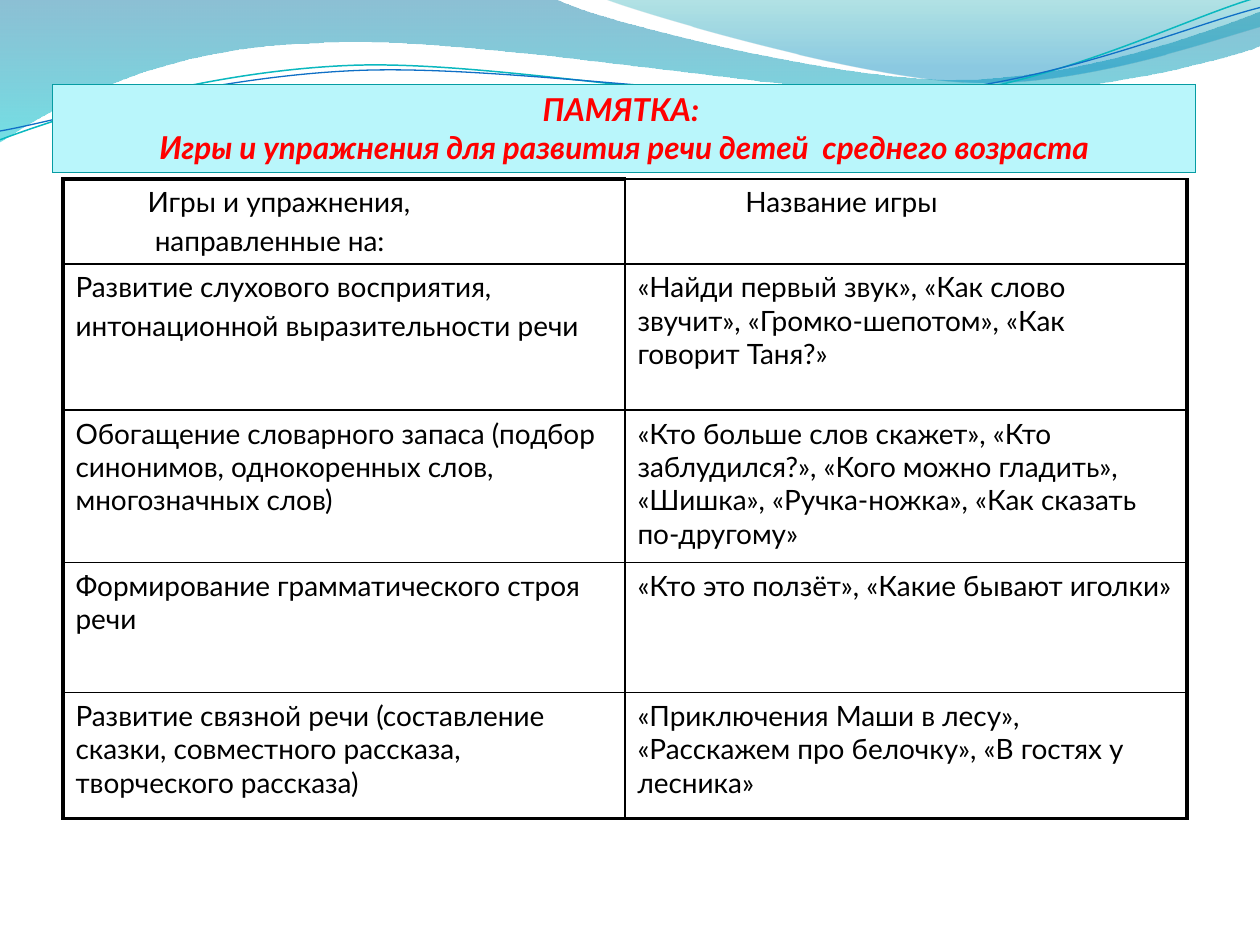
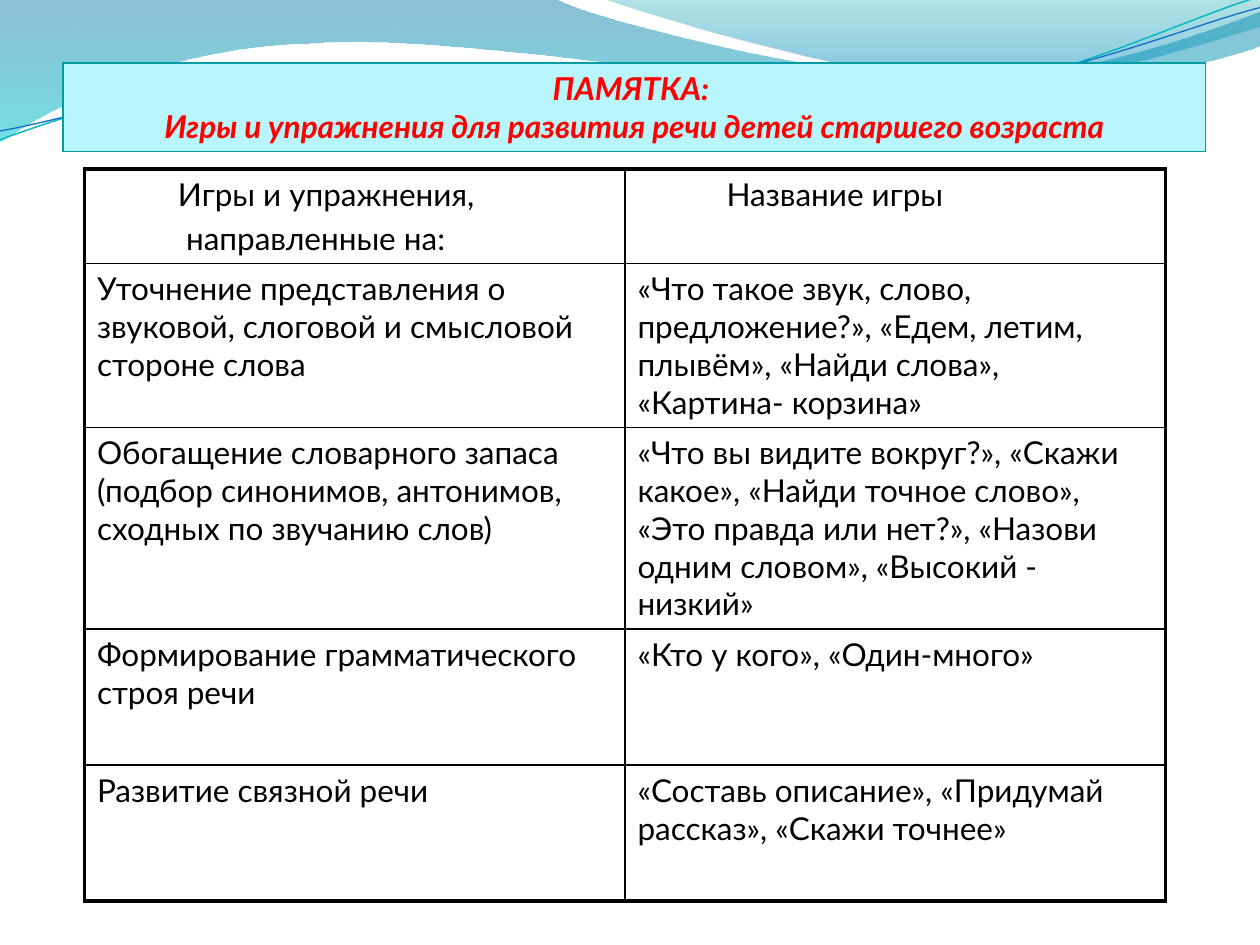
"""Builds two memo slides listing speech games for middle and senior preschool groups."""
from lxml.etree import SubElement
from pptx import Presentation
from pptx.dml.color import RGBColor as RGB
from pptx.enum.text import PP_ALIGN
from pptx.oxml.ns import qn
from pptx.util import Inches, Pt

FONT = "Lato"
BLACK = RGB(0x00, 0x00, 0x00)
RED = RGB(0xFF, 0x00, 0x00)
PALE_CYAN = RGB(0xB9, 0xF6, 0xFB)
TEAL_EDGE = RGB(0x06, 0x9C, 0xA3)
DEEP_BLUE = RGB(0x00, 0x74, 0xA1)
CYAN = RGB(0x00, 0xC6, 0xCF)
SEA = RGB(0x00, 0xA1, 0xA9)
SKY = RGB(0x00, 0x8B, 0xBF)
TURQUOISE = RGB(0x0A, 0xB8, 0xBF)
BLUE = RGB(0x0F, 0x6F, 0xC6)

THIN, THICK = 1, 2.25
SPACE_EM = 0.257
HEADER = (["Игры и упражнения,", "направленные на:"], ["Название игры"])

MEMOS = [
    {
        "title": ["ПАМЯТКА: ",
                  "Игры и упражнения для развития речи детей  среднего возраста"],
        "title_at": (0.42, 0.67),
        "table_at": (0.5, 1.42),
        "width": 8.92,
        "heights": [0.67, 1.16, 1.21, 1.03, 1.0],
        "size": 16,
        "header_indents": [(10, 11), (15,)],
        "top_edges": (THICK, THIN),
        "rows": [
            HEADER,
            (["Развитие слухового восприятия,", "интонационной выразительности речи"],
             ["«Найди первый звук», «Как слово звучит», «Громко-шепотом», "
              "«Как говорит Таня?»"]),
            (["Обогащение словарного запаса (подбор синонимов, однокоренных слов, "
              "многозначных слов)"],
             ["«Кто больше слов скажет», «Кто заблудился?», «Кого можно гладить», "
              "«Шишка», «Ручка-ножка», «Как сказать по-другому»"]),
            (["Формирование грамматического строя речи"],
             ["«Кто это ползёт», «Какие бывают иголки»"]),
            (["Развитие связной речи (составление сказки, совместного рассказа, "
              "творческого рассказа)"],
             ["«Приключения Маши в лесу», «Расскажем про белочку», "
              "«В гостях у лесника»"]),
        ],
    },
    {
        "title": ["ПАМЯТКА: ",
                  "Игры и упражнения для развития речи детей старшего возраста"],
        "title_at": (0.5, 0.5),
        "table_at": (0.67, 1.34),
        "width": 8.58,
        "heights": [0.75, 1.3, 1.6, 1.08, 1.08],
        "size": 18,
        "header_indents": [(10, 11), (11,)],
        "top_edges": (THICK, THICK),
        "rows": [
            HEADER,
            (["Уточнение представления о звуковой, слоговой и смысловой стороне слова"],
             ["«Что такое звук, слово, предложение?», «Едем, летим, плывём», "
              "«Найди слова», «Картина- корзина»"]),
            (["Обогащение словарного запаса (подбор синонимов, антонимов, "
              "сходных по звучанию слов)"],
             ["«Что вы видите вокруг?», «Скажи какое», «Найди точное слово», "
              "«Это правда или нет?», «Назови одним словом», «Высокий - низкий»"]),
            (["Формирование грамматического строя речи"],
             ["«Кто у кого», «Один-много»"]),
            (["Развитие связной речи"],
             ["«Составь описание», «Придумай рассказ», «Скажи точнее»"]),
        ],
    },
]

WAVES = [
    ([(0, 0), (4.4, -0.01), (4.76, 0.17, 6.64, 0.63, 7.58, 0.63),
      (8.53, 0.63, 9.58, 0.26, 10, 0.09), (10.01, 0.36),
      (9.83, 0.44, 8.7, 0.76, 7.46, 0.75), (6.22, 0.75, 3.82, 0.28, 2.57, 0.34),
      (1.29, 0.36, 0.46, 0.83, -0.01, 1.13), (0, 0)],
     [(0, DEEP_BLUE, 45), (1, CYAN, 55)]),
    ([(4.79, -0.01), (5.09, 0.11, 6.82, 0.62, 7.69, 0.65),
      (8.56, 0.69, 9.61, 0.32, 10, 0.21), (10, 0), (4.79, -0.01)],
     [(0, SEA, 30), (0.8, SKY, 45)]),
]

WAVE_LINES = [
    ([(0, 1.11), (0.48, 0.93, 1.58, 0.57, 2.77, 0.52),
      (3.95, 0.47, 5.93, 0.89, 7.13, 0.8), (8.33, 0.71, 9.38, 0.15, 9.98, -0.02)],
     TURQUOISE, 0.85),
    ([(0, 1.04), (0.47, 0.96, 1.64, 0.61, 2.83, 0.56),
      (4.03, 0.51, 5.97, 0.84, 7.17, 0.75), (8.36, 0.67, 9.41, 0.21, 10, 0.06)],
     BLUE, 0.75),
]


def add_outline(slide, outline, close):
    ends = [(Inches(part[-2]), Inches(part[-1])) for part in outline]
    builder = slide.shapes.build_freeform(*ends[0])
    builder.add_line_segments(ends[1:], close=close)
    sp = builder.convert_to_shape()
    sp.shadow.inherit = False
    segments = list(sp.element.iter(qn("a:lnTo")))
    for segment, part in zip(segments, outline[1:]):
        if len(part) == 6:
            segment.tag = qn("a:cubicBezTo")
            for i in (0, 2):
                pt = segment.makeelement(qn("a:pt"), {
                    "x": str(Inches(part[i]) - sp.left),
                    "y": str(Inches(part[i + 1]) - sp.top)})
                segment.insert(i // 2, pt)
    return sp


def add_waves(slide):
    for outline, stops in WAVES:
        sp = add_outline(slide, outline, True)
        sp.line.fill.background()
        sp.fill.gradient()
        sp.fill.gradient_angle = 270
        for stop, (position, color, _) in zip(sp.fill.gradient_stops, stops):
            stop.position = position
            stop.color.rgb = color
        for clr, (_, _, opacity) in zip(sp.element.iter(qn("a:srgbClr")), stops):
            SubElement(clr, qn("a:alpha")).set("val", str(opacity * 1000))
    for outline, color, width in WAVE_LINES:
        sp = add_outline(slide, outline, False)
        sp.fill.background()
        sp.line.color.rgb = color
        sp.line.width = Pt(width)


def set_borders(cell, color, widths):
    tcPr = cell._tc.get_or_add_tcPr()
    for side, width in zip("LRTB", widths):
        ln = SubElement(tcPr, qn(f"a:ln{side}"), w=str(Pt(width)))
        SubElement(SubElement(ln, qn("a:solidFill")), qn("a:srgbClr"), val=str(color))


def write(cell, lines, size, color):
    tf = cell.text_frame
    tf.text = "\n".join(lines)
    for p in tf.paragraphs:
        font = p.runs[0].font
        font.name, font.size, font.color.rgb = FONT, Pt(size), color
    return tf.paragraphs


def add_plain_table(slide, at, width, heights, columns):
    x, y = at
    table = slide.shapes.add_table(len(heights), columns, Inches(x), Inches(y),
                                   Inches(width), Inches(sum(heights))).table
    table.first_row = table.horz_banding = False
    for row, height in zip(table.rows, heights):
        row.height = Inches(height)
    return table


def add_games(slide, memo):
    size, last = memo["size"], len(memo["rows"]) - 1
    table = add_plain_table(slide, memo["table_at"], memo["width"], memo["heights"], 2)
    for i, row in enumerate(memo["rows"]):
        for j, lines in enumerate(row):
            cell = table.cell(i, j)
            set_borders(cell, BLACK, (THIN if j else THICK, THICK if j else THIN,
                                      THIN if i else memo["top_edges"][j],
                                      THICK if i == last else THIN))
            cell.fill.background()
            paragraphs = write(cell, lines, size, BLACK)
            for p in paragraphs[1:]:
                p.space_before = Pt(size * 0.2)
            if i == 0:
                for p, spaces in zip(paragraphs, memo["header_indents"][j]):
                    indent = Pt(spaces * size * SPACE_EM)
                    p._p.get_or_add_pPr().set("marL", str(indent))


def add_title(slide, memo):
    cell = add_plain_table(slide, memo["title_at"], 9.07, [0.7], 1).cell(0, 0)
    set_borders(cell, TEAL_EDGE, [0.75] * 4)
    cell.fill.solid()
    cell.fill.fore_color.rgb = PALE_CYAN
    for p in write(cell, memo["title"], 18, RED):
        p.alignment = PP_ALIGN.CENTER
        p.runs[0].font.bold = p.runs[0].font.italic = True


def main():
    prs = Presentation()
    prs.slide_width, prs.slide_height = Inches(10), Inches(7.5)
    for memo in MEMOS:
        slide = prs.slides.add_slide(prs.slide_layouts[6])
        add_waves(slide)
        add_games(slide, memo)
        add_title(slide, memo)
    prs.save("out.pptx")


if __name__ == "__main__":
    main()
